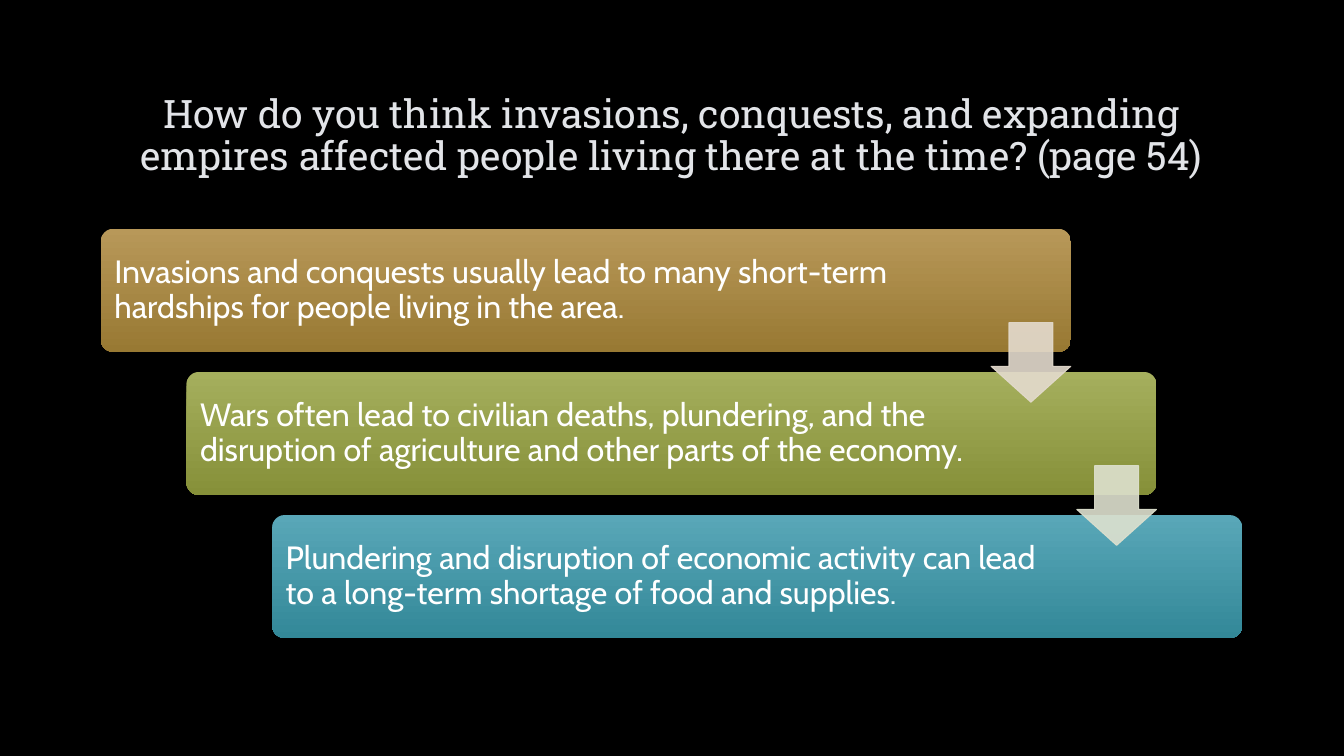
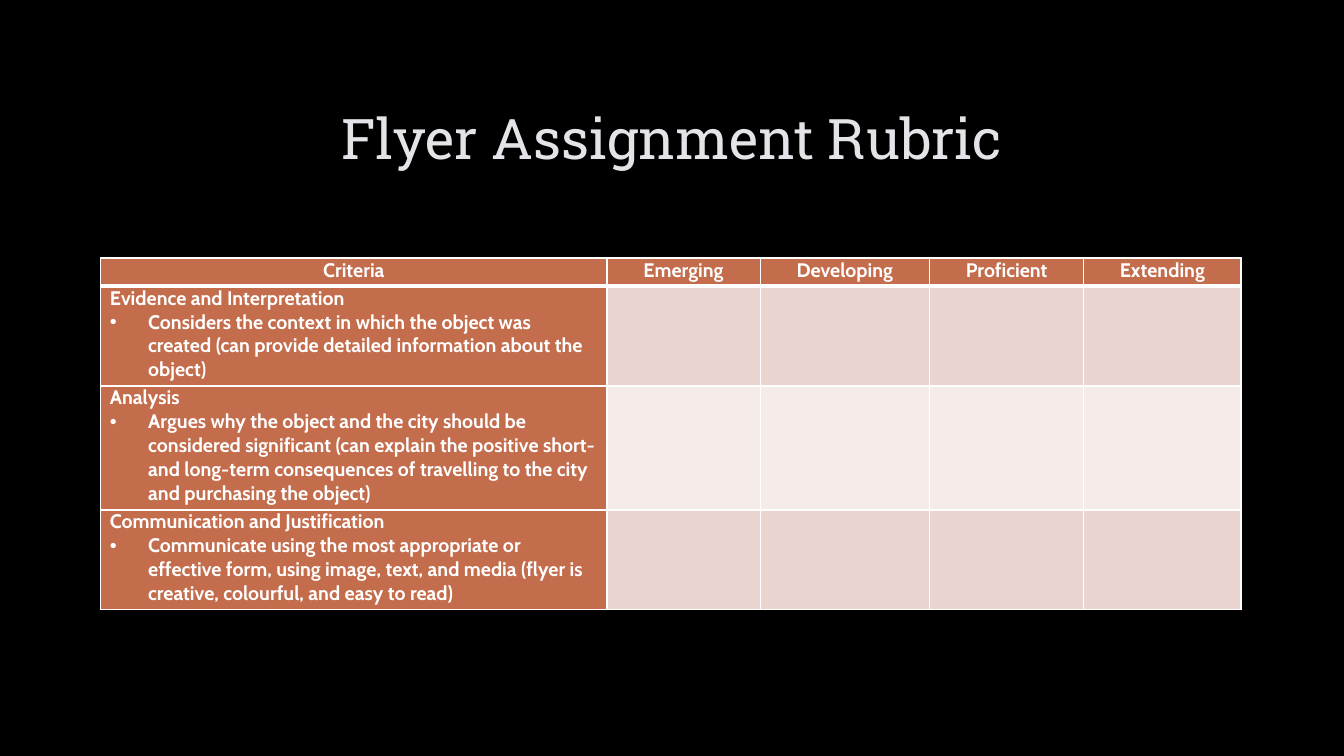
from lxml import etree
from pptx import Presentation
from pptx.dml.color import RGBColor
from pptx.enum.shapes import MSO_SHAPE
from pptx.enum.text import MSO_ANCHOR, MSO_AUTO_SIZE, PP_ALIGN
from pptx.oxml.ns import qn
from pptx.util import Inches, Pt

ROUNDED = MSO_SHAPE.ROUNDED_RECTANGLE
DOWN_ARROW = MSO_SHAPE.DOWN_ARROW
MIDDLE = MSO_ANCHOR.MIDDLE
NO_AUTOFIT = MSO_AUTO_SIZE.NONE
LEFT = PP_ALIGN.LEFT
CENTER = PP_ALIGN.CENTER

HEADING_FONT = "Roboto Slab"
BODY_FONT = "Cabin"
BLACK = "000000"
WHITE = "FFFFFF"
TITLE_COLOR = "E2E4E8"
TITLE_OUTLINE = "404040"
RUBRIC_COLOR = "C36D4D"
BAND_COLORS = ("E9D4D0", "F5EBE9")

MARGIN = 1
CONTENT_WIDTH = 11.32
STEP_WIDTH, STEP_HEIGHT = 9.62, 1.22
STEP_TOP = 2.27
STEP_RIGHT, STEP_DOWN = 0.85, 1.42
ARROW_SIZE = 0.79
ARROW_OVERLAP = 0.29

STEPS = (
    ("Invasions and conquests usually lead to many short-term hardships "
     "for people living in the area.", "B89859", "987933"),
    ("Wars often lead to civilian deaths, plundering, and the disruption of "
     "agriculture and other parts of the economy.", "A5AF5D", "869039"),
    ("Plundering and disruption of economic activity can lead to a long-term "
     "shortage of food and supplies.", "59A7B8", "338898"),
)
ARROW_COLORS = ("E4DBCE", "DEE1CF")

RUBRIC_HEADERS = ("Criteria", "Emerging", "Developing", "Proficient", "Extending")
RUBRIC_WIDTHS = (5.02, 1.52, 1.68, 1.53, 1.56)
RUBRIC_HEIGHTS = (0.28, 0.99, 1.23, 0.99)
CRITERIA = (
    ("Evidence and Interpretation",
     "Considers the context in which the object was created "
     "(can provide detailed information about the object)"),
    ("Analysis",
     "Argues why the object and the city should be considered significant "
     "(can explain the positive short- and long-term consequences of "
     "travelling to the city and purchasing the object)"),
    ("Communication and Justification",
     "Communicate using the most appropriate or effective form, using image, "
     "text, and media (flyer is creative, colourful, and easy to read)"),
)


def rgb(color):
    return RGBColor.from_string(color)


def paint(fill, color):
    fill.solid()
    fill.fore_color.rgb = rgb(color)


def line_xml(tag, color, width, opacity=100):
    line = etree.Element(qn(tag), w=str(Pt(width)))
    solid = etree.SubElement(line, qn("a:solidFill"))
    tint = etree.SubElement(solid, qn("a:srgbClr"), val=color)
    if opacity < 100:
        etree.SubElement(tint, qn("a:alpha"), val=str(opacity * 1000))
    return line


def write(paragraph, text, *, size, font=BODY_FONT, color=WHITE, bold=False,
          align=LEFT, spacing=None):
    paragraph.alignment = align
    paragraph.line_spacing = spacing
    run = paragraph.add_run()
    run.text = text
    run.font.size = Pt(size)
    run.font.name = font
    run.font.bold = bold
    run.font.color.rgb = rgb(color)
    return run


def add_titled_slide(prs, text, size, spacing=None):
    slide = prs.slides.add_slide(prs.slide_layouts[5])
    title = slide.shapes.title
    title.left, title.top = Inches(MARGIN), Inches(0.67)
    title.width, title.height = Inches(CONTENT_WIDTH), Inches(1.38)
    frame = title.text_frame
    frame.auto_size = NO_AUTOFIT
    frame.vertical_anchor = MIDDLE
    run = write(frame.paragraphs[0], text, size=size, font=HEADING_FONT,
                color=TITLE_COLOR, align=CENTER, spacing=spacing)
    run.font.fill.solid()
    run.font.color.rgb = rgb(TITLE_COLOR)
    properties = run.font.color and run._r.get_or_add_rPr()
    properties.insert(0, line_xml("a:ln", TITLE_OUTLINE, 0.75, 10))
    return slide


def add_step(slide, left, top, text, top_color, bottom_color):
    step = slide.shapes.add_shape(ROUNDED, Inches(left), Inches(top),
                                  Inches(STEP_WIDTH), Inches(STEP_HEIGHT))
    step.shadow.inherit = False
    step.adjustments[0] = 0.1
    step.line.fill.background()
    step.fill.gradient()
    step.fill.gradient_angle = 270
    for stop, color in zip(step.fill.gradient_stops, (top_color, bottom_color)):
        stop.color.rgb = rgb(color)
    frame = step.text_frame
    frame.word_wrap = True
    frame.vertical_anchor = MIDDLE
    frame.margin_left = Inches(0.1)
    frame.margin_right = Inches(1.74)
    write(frame.paragraphs[0], text, size=23, spacing=0.9)


def add_step_arrow(slide, left, top, color):
    arrow = slide.shapes.add_shape(DOWN_ARROW, Inches(left), Inches(top),
                                   Inches(ARROW_SIZE), Inches(ARROW_SIZE))
    arrow.shadow.inherit = False
    arrow.adjustments[0] = 0.55
    arrow.adjustments[1] = 0.45
    paint(arrow.fill, color)
    paint(arrow.line.fill, color)
    arrow.line.width = Pt(0.75)
    for tint in arrow.element.spPr.iter(qn("a:srgbClr")):
        etree.SubElement(tint, qn("a:alpha"), val="90000")


def add_staircase(slide):
    corners = [(MARGIN + i * STEP_RIGHT, STEP_TOP + i * STEP_DOWN)
               for i in range(len(STEPS))]
    for (left, top), step in zip(corners, STEPS):
        add_step(slide, left, top, *step)
    for (left, top), color in zip(corners, ARROW_COLORS):
        add_step_arrow(slide, left + STEP_WIDTH - ARROW_SIZE,
                       top + STEP_HEIGHT - ARROW_OVERLAP, color)


def format_cell(cell, color, top_width, bottom_width):
    cell.margin_left = cell.margin_right = Inches(0.09)
    cell.margin_top = cell.margin_bottom = 0
    paint(cell.fill, color)
    properties = cell._tc.get_or_add_tcPr()
    widths = {"a:lnL": 1, "a:lnR": 1, "a:lnT": top_width, "a:lnB": bottom_width}
    for position, (side, width) in enumerate(widths.items()):
        properties.insert(position, line_xml(side, WHITE, width))


def write_criterion(frame, heading, detail):
    write(frame.paragraphs[0], heading, size=14, bold=True)
    bullet = frame.add_paragraph()
    write(bullet, detail, size=14, bold=True)
    properties = bullet._p.get_or_add_pPr()
    properties.set("marL", str(Inches(0.38)))
    properties.set("indent", str(-Inches(0.38)))
    etree.SubElement(properties, qn("a:buFont"), typeface="Arial")
    etree.SubElement(properties, qn("a:buChar"), char="•")


def add_rubric(slide):
    rubric = slide.shapes.add_table(
        len(RUBRIC_HEIGHTS), len(RUBRIC_WIDTHS), Inches(MARGIN), Inches(2.56),
        Inches(CONTENT_WIDTH), Inches(sum(RUBRIC_HEIGHTS))).table
    for column, width in zip(rubric.columns, RUBRIC_WIDTHS):
        column.width = Inches(width)
    for row, height in zip(rubric.rows, RUBRIC_HEIGHTS):
        row.height = Inches(height)
    for r, row in enumerate(rubric.rows):
        for c, cell in enumerate(row.cells):
            is_label = r == 0 or c == 0
            color = RUBRIC_COLOR if is_label else BAND_COLORS[(r - 1) % 2]
            format_cell(cell, color, 3 if r == 1 else 1, 3 if r == 0 else 1)
    for c, header in enumerate(RUBRIC_HEADERS):
        write(rubric.cell(0, c).text_frame.paragraphs[0], header,
              size=14, bold=True, align=CENTER)
    for r, criterion in enumerate(CRITERIA, start=1):
        write_criterion(rubric.cell(r, 0).text_frame, *criterion)


def main():
    prs = Presentation()
    prs.slide_width, prs.slide_height = Inches(13.33), Inches(7.5)
    paint(prs.slide_master.background.fill, BLACK)
    add_staircase(add_titled_slide(
        prs, "How do you think invasions, conquests, and expanding empires "
        "affected people living there at the time? (page 54)", 28, 0.9))
    add_rubric(add_titled_slide(prs, "Flyer Assignment Rubric", 40))
    prs.save("out.pptx")


if __name__ == "__main__":
    main()
